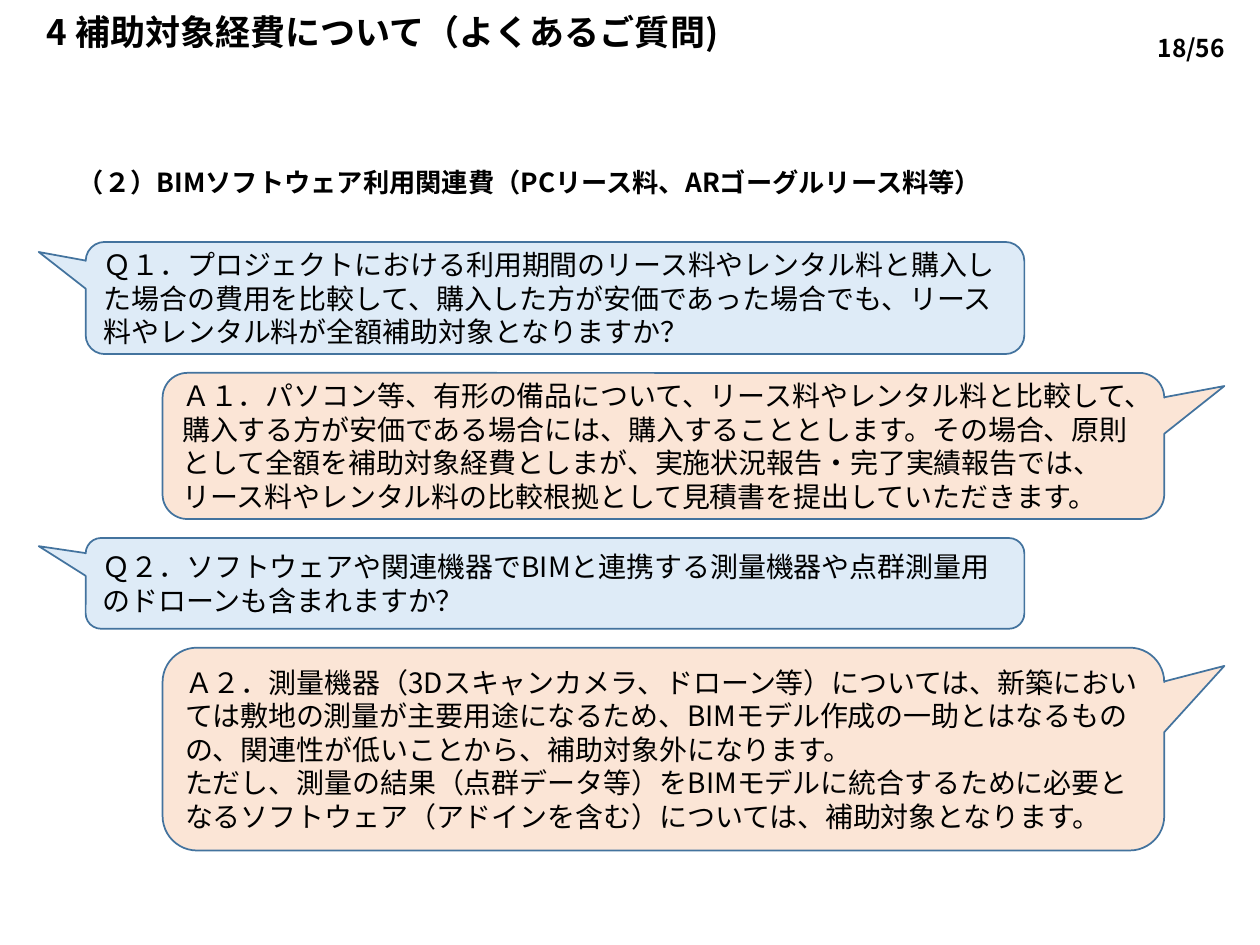
from lxml import etree
from pptx import Presentation
from pptx.dml.color import RGBColor
from pptx.enum.shapes import MSO_SHAPE
from pptx.enum.text import MSO_ANCHOR, PP_ALIGN
from pptx.oxml.ns import qn
from pptx.util import Inches, Pt

CALLOUT = MSO_SHAPE.ROUNDED_RECTANGULAR_CALLOUT
TOP, MIDDLE = MSO_ANCHOR.TOP, MSO_ANCHOR.MIDDLE
LEFT, CENTER = PP_ALIGN.LEFT, PP_ALIGN.CENTER
FONT = "Noto Sans CJK JP"
COLORS = {"text": "000000", "line": "43739E", "ask": "DEEBF7", "reply": "FBE5D6"}

# Content
TITLE = "4 補助対象経費について（よくあるご質問)"
PAGE = "18/56"
TOPIC = "（２）BIMソフトウェア利用関連費（PCリース料、ARゴーグルリース料等）"
# kind, height, paragraphs
TALK = [
    ("ask", 0.89, ["Ｑ１．プロジェクトにおける利用期間のリース料やレンタル料と購入した場合の費用を比較して、"
                   "購入した方が安価であった場合でも、リース料やレンタル料が全額補助対象となりますか？"]),
    ("reply", 1.16, ["Ａ１．パソコン等、有形の備品について、リース料やレンタル料と比較して、"
                     "購入する方が安価である場合には、購入することとします。その場合、"
                     "原則として全額を補助対象経費としまが、実施状況報告・完了実績報告では、"
                     "リース料やレンタル料の比較根拠として見積書を提出していただきます。"]),
    ("ask", 0.72, ["Ｑ２．ソフトウェアや関連機器でBIMと連携する測量機器や点群測量用のドローンも含まれますか？"]),
    ("reply", 1.61, ["Ａ２．測量機器（3Dスキャンカメラ、ドローン等）については、"
                     "新築においては敷地の測量が主要用途になるため、BIMモデル作成の一助とはなるものの、"
                     "関連性が低いことから、補助対象外になります。",
                     "ただし、測量の結果（点群データ等）をBIMモデルに統合するために必要となる"
                     "ソフトウェア（アドインを含む）については、補助対象となります。"]),
]
# kind: left, width, tail x, tail y, corner
FORM = {"ask": (0.68, 7.45, -0.55, -0.41, 0.17),
        "reply": (1.29, 7.95, 0.56, -0.41, 0.17)}
START, GAP = 1.92, 0.15


def color(key):
    return RGBColor.from_string(COLORS[key])


def write(shape, texts, size, bold=False, anchor=MIDDLE, align=LEFT, space=None):
    frame = shape.text_frame
    frame.word_wrap = True
    frame.vertical_anchor = anchor
    for i, text in enumerate(texts):
        para = frame.add_paragraph() if i else frame.paragraphs[0]
        para.alignment = align
        if space:
            para.line_spacing = space
        run = para.add_run()
        run.text = text
        font = run.font
        font.name, font.size, font.bold = FONT, Pt(size), bold
        font.color.rgb = color("text")
        east = etree.SubElement(font._element, qn("a:ea"))
        east.set("typeface", FONT)


def label(box, text, size, **style):
    shape = slide.shapes.add_textbox(*map(Inches, box))
    write(shape, [text], size, bold=True, **style)
    return shape


deck = Presentation()
deck.slide_width, deck.slide_height = Inches(10), Inches(7.5)
slide = deck.slides.add_slide(deck.slide_layouts[6])

# Heading and page number
label((0.27, 0, 8.12, 0.54), TITLE, 20, space=0.9)
label((8.91, 0, 1.09, 0.43), PAGE, 14, align=CENTER, space=Pt(40))

# Questions and answers, stacked with equal gaps
top = START
for kind, height, texts in TALK:
    left, width, *adjust = FORM[kind]
    bubble = slide.shapes.add_shape(CALLOUT, *map(Inches, (left, top, width, height)))
    for i, value in enumerate(adjust):
        bubble.adjustments[i] = value
    bubble.shadow.inherit = False
    bubble.fill.solid()
    bubble.fill.fore_color.rgb = color(kind)
    bubble.line.color.rgb = color("line")
    bubble.line.width = Pt(1)
    write(bubble, texts, 16)
    top += height + GAP

# Topic line, indented
topic = label((0.27, 1.3, 9.45, 5.45), TOPIC, 15, anchor=TOP, space=0.9)
props = topic.text_frame.paragraphs[0]._p.get_or_add_pPr()
props.set("marL", str(Inches(0.25)))
props.set("indent", "0")

deck.save("out.pptx")
